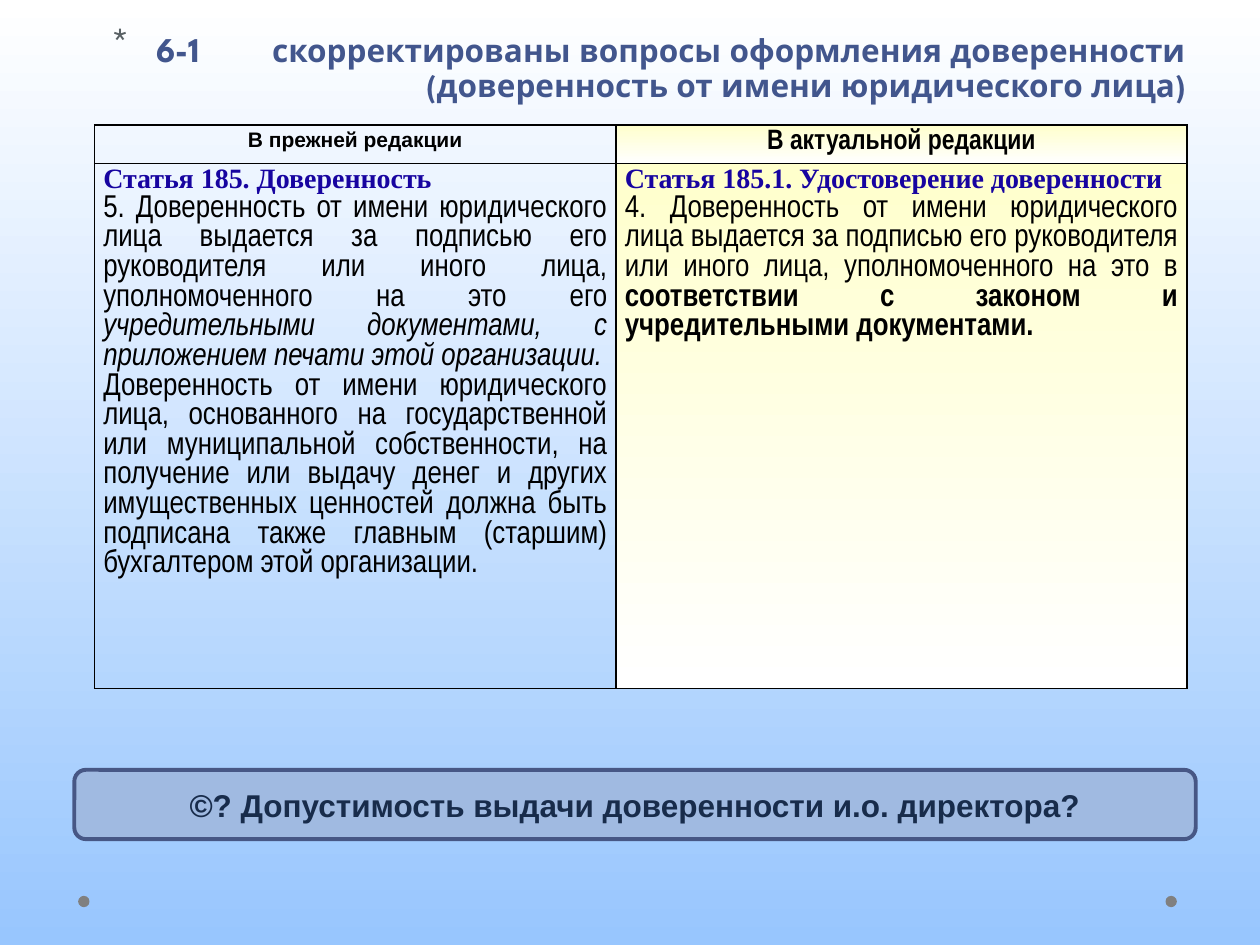
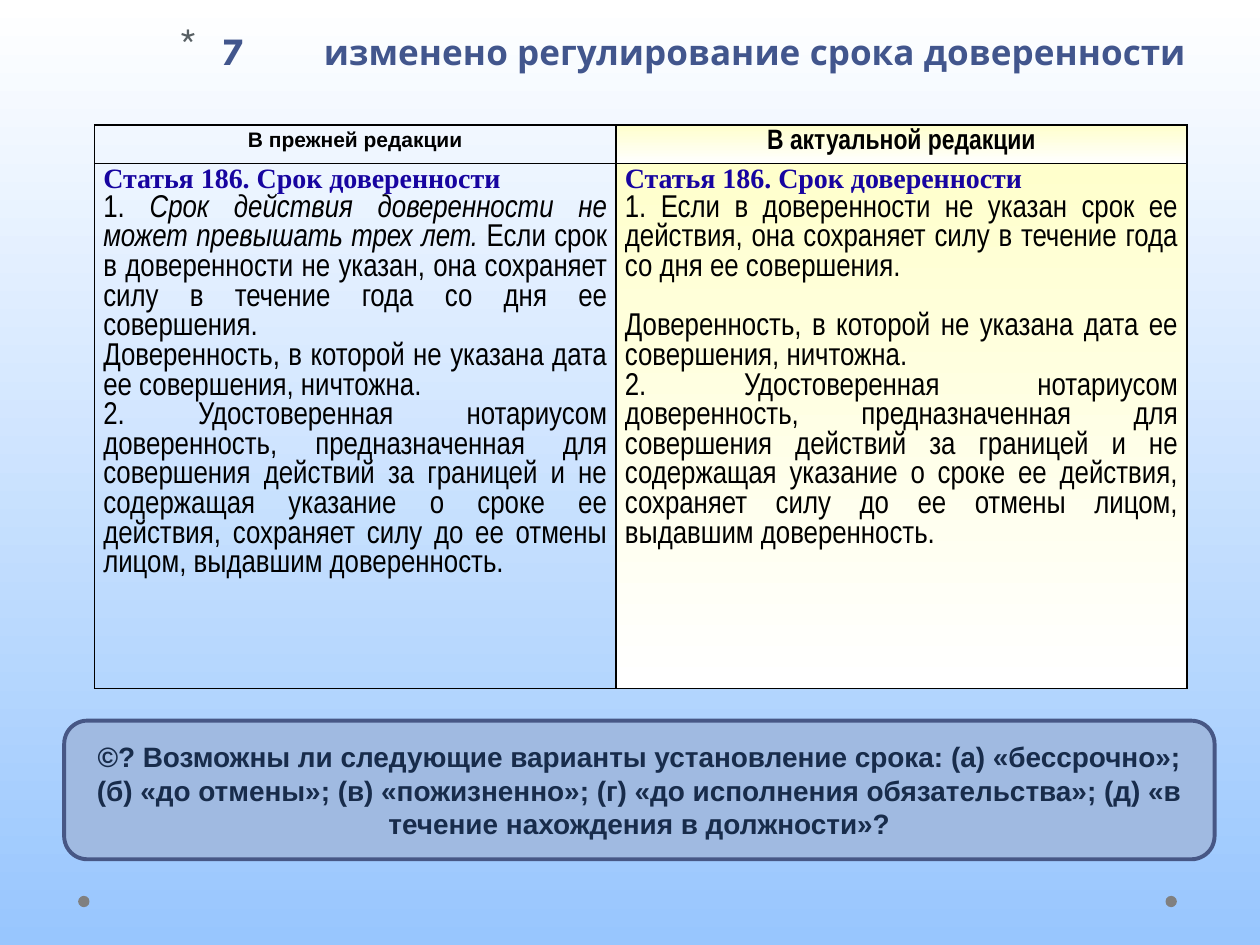
from dataclasses import dataclass, field

from lxml import etree
from pptx import Presentation
from pptx.dml.color import RGBColor
from pptx.dml.fill import FillFormat
from pptx.enum.shapes import MSO_SHAPE
from pptx.enum.text import MSO_ANCHOR, PP_ALIGN
from pptx.oxml.ns import qn
from pptx.slide import Slide
from pptx.table import _Cell
from pptx.text.text import _Paragraph, _Run
from pptx.util import Inches, Pt

CENTER, RIGHT, JUSTIFY = PP_ALIGN.CENTER, PP_ALIGN.RIGHT, PP_ALIGN.JUSTIFY
TOP, MIDDLE = MSO_ANCHOR.TOP, MSO_ANCHOR.MIDDLE
OVAL, ROUNDED = MSO_SHAPE.OVAL, MSO_SHAPE.ROUNDED_RECTANGLE

COLORS = {
    "sky_top": "FFFFFF",
    "sky_bottom": "98C6FE",
    "dot": "808080",
    "title": "42568D",
    "bullet": "586064",
    "black": "000000",
    "article": "1704A0",
    "new_top": "FFFFCC",
    "new_bottom": "FFFFFF",
    "question_fill": "A0BAE1",
    "question_line": "475785",
    "question_text": "182C4B",
}
TITLE_FONT, BASE_FONT = "League Spartan", "Arial"
LAW_FONT, ARTICLE_FONT = "Arial Narrow", "Times New Roman"
LAW_SIZE = 18
LAW_LINE = 16.9
COLUMN_WIDTHS = (4.14, 4.53)
ROW_HEIGHTS = (0.2, 2.47)


@dataclass
class Style:
    font: str
    size: float
    color: str
    bold: bool = True


@dataclass
class Phrase:
    text: str
    bold: bool = False
    italic: bool = False


@dataclass
class Clause:
    phrases: list[Phrase]
    space_before: float = 0


@dataclass
class Edition:
    article: str
    clauses: list[Clause] = field(default_factory=list)


@dataclass
class Question:
    text: str
    size: float
    box: tuple[float, float, float, float]


@dataclass
class Topic:
    number: str
    number_size: float
    title: list[str]
    title_size: float
    former: Edition
    current: Edition
    question: Question


UNDATED = Clause([Phrase("Доверенность, в которой не указана дата ее совершения, ничтожна.")])
ABROAD = Clause([Phrase(
    "2. Удостоверенная нотариусом доверенность, предназначенная для совершения действий "
    "за границей и не содержащая указание о сроке ее действия, сохраняет силу до ее отмены "
    "лицом, выдавшим доверенность.")])
SIGNATURE = ("Доверенность от имени юридического лица выдается за подписью его руководителя "
             "или иного лица, уполномоченного на это ")
TERM_ARTICLE = "Статья 186. Срок доверенности"

TOPICS = [
    Topic(
        "6-1", 19.8,
        ["скорректированы вопросы оформления доверенности",
         "(доверенность от имени юридического лица)"], 18,
        Edition("Статья 185. Доверенность", [
            Clause([
                Phrase("5. " + SIGNATURE + "его "),
                Phrase("учредительными документами, с приложением печати этой организации.",
                       italic=True),
            ]),
            Clause([Phrase(
                "Доверенность от имени юридического лица, основанного на государственной или "
                "муниципальной собственности, на получение или выдачу денег и других "
                "имущественных ценностей должна быть подписана также главным (старшим) "
                "бухгалтером этой организации.")]),
        ]),
        Edition("Статья 185.1. Удостоверение доверенности", [
            Clause([
                Phrase("4. " + SIGNATURE + "в "),
                Phrase("соответствии с законом и учредительными документами.", bold=True),
            ]),
        ]),
        Question("©? Допустимость выдачи доверенности и.о. директора?", 18,
                 (0.59, 6.11, 8.9, 0.55)),
    ),
    Topic(
        "7", 22, ["изменено регулирование срока доверенности"], 20,
        Edition(TERM_ARTICLE, [
            Clause([
                Phrase("1. "),
                Phrase("Срок действия доверенности не может превышать трех лет.", italic=True),
                Phrase(" Если срок в доверенности не указан, она сохраняет силу в течение "
                       "года со дня ее совершения."),
            ]),
            UNDATED,
            ABROAD,
        ]),
        Edition(TERM_ARTICLE, [
            Clause([Phrase("1. Если в доверенности не указан срок ее действия, она сохраняет "
                           "силу в течение года со дня ее совершения.")]),
            Clause(UNDATED.phrases, space_before=LAW_LINE),
            ABROAD,
        ]),
        Question("©? Возможны ли следующие варианты установление срока: (а) «бессрочно»; "
                 "(б) «до отмены»; (в) «пожизненно»; (г) «до исполнения обязательства»; "
                 "(д) «в течение нахождения в должности»?", 16,
                 (0.51, 5.72, 9.13, 1.1)),
    ),
]


def rgb(name: str) -> RGBColor:
    return RGBColor.from_string(COLORS[name])


def add_run(paragraph: _Paragraph, text: str, style: Style, italic: bool = False) -> _Run:
    run = paragraph.add_run()
    run.text = text
    run.font.name = style.font
    run.font.size = Pt(style.size)
    run.font.bold = style.bold
    run.font.italic = italic
    run.font.color.rgb = rgb(style.color)
    return run


def fill_downward(fill: FillFormat, top: str, bottom: str) -> None:
    """Apply a vertical gradient from top to bottom."""
    fill.gradient()
    fill.gradient_angle = 270
    for stop, name in zip(fill.gradient_stops, (top, bottom)):
        stop.color.rgb = rgb(name)


def add_backdrop(slide: Slide) -> None:
    fill_downward(slide.background.fill, "sky_top", "sky_bottom")
    for left in (0.62, 9.25):
        dot = slide.shapes.add_shape(OVAL, Inches(left), Inches(7.11), Inches(0.09), Inches(0.09))
        dot.shadow.inherit = False
        dot.fill.solid()
        dot.fill.fore_color.rgb = rgb("dot")
        dot.line.fill.background()


def set_asterisk_bullet(paragraph: _Paragraph) -> None:
    properties = paragraph._p.get_or_add_pPr()
    properties.set("marL", str(Inches(0.35)))
    properties.set("indent", str(-Inches(0.35)))
    color = etree.SubElement(properties, qn("a:buClr"))
    etree.SubElement(color, qn("a:srgbClr"), val=COLORS["bullet"])
    etree.SubElement(properties, qn("a:buSzPct"), val="128000")
    etree.SubElement(properties, qn("a:buFont"), typeface=TITLE_FONT)
    etree.SubElement(properties, qn("a:buChar"), char="*")


def add_title(slide: Slide, topic: Topic) -> None:
    frame = slide.shapes.add_textbox(Inches(0.51), Inches(0.21), Inches(9), Inches(0.63)).text_frame
    frame.word_wrap = True
    frame.vertical_anchor = TOP
    paragraph = frame.paragraphs[0]
    paragraph.alignment = RIGHT
    paragraph.line_spacing = 0.9
    set_asterisk_bullet(paragraph)
    number_style = Style(TITLE_FONT, topic.number_size, "title")
    add_run(paragraph, topic.number, number_style)
    gap = add_run(paragraph, " ", number_style)
    gap._r.get_or_add_rPr().set("spc", str(round(topic.number_size * 182)))
    for index, line in enumerate(topic.title):
        if index:
            paragraph.add_line_break()
        add_run(paragraph, line, Style(TITLE_FONT, topic.title_size, "title"))


def set_borders(cell: _Cell) -> None:
    properties = cell._tc.get_or_add_tcPr()
    for index, side in enumerate(("lnL", "lnR", "lnT", "lnB")):
        border = etree.Element(qn(f"a:{side}"), w=str(Pt(1)))
        solid = etree.SubElement(border, qn("a:solidFill"))
        etree.SubElement(solid, qn("a:srgbClr"), val=COLORS["black"])
        properties.insert(index, border)


def write_heading(cell: _Cell, text: str, style: Style) -> None:
    paragraph = cell.text_frame.paragraphs[0]
    paragraph.alignment = CENTER
    paragraph.line_spacing = 1.15
    add_run(paragraph, text, style)


def write_edition(cell: _Cell, edition: Edition) -> None:
    heading = cell.text_frame.paragraphs[0]
    heading.alignment = JUSTIFY
    add_run(heading, edition.article, Style(ARTICLE_FONT, 16, "article"))
    for clause in edition.clauses:
        paragraph = cell.text_frame.add_paragraph()
        paragraph.alignment = JUSTIFY
        paragraph.space_before = Pt(clause.space_before)
        for phrase in clause.phrases:
            style = Style(LAW_FONT, LAW_SIZE, "black", phrase.bold)
            add_run(paragraph, phrase.text, style, phrase.italic)


def add_comparison(slide: Slide, topic: Topic) -> None:
    table = slide.shapes.add_table(
        2, 2, Inches(0.75), Inches(0.99),
        Inches(sum(COLUMN_WIDTHS)), Inches(sum(ROW_HEIGHTS))).table
    table.first_row = table.horz_banding = False
    for column, width in zip(table.columns, COLUMN_WIDTHS):
        column.width = Inches(width)
    for row, height in zip(table.rows, ROW_HEIGHTS):
        row.height = Inches(height)
        for cell in row.cells:
            cell.margin_left = cell.margin_right = Inches(0.07)
            cell.margin_top = cell.margin_bottom = 0
            set_borders(cell)
        former, current = row.cells
        former.fill.background()
        fill_downward(current.fill, "new_top", "new_bottom")
    write_heading(table.cell(0, 0), "В прежней редакции", Style(BASE_FONT, 12, "black"))
    write_heading(table.cell(0, 1), "В актуальной редакции", Style(LAW_FONT, 16, "black"))
    write_edition(table.cell(1, 0), topic.former)
    write_edition(table.cell(1, 1), topic.current)


def add_question(slide: Slide, question: Question) -> None:
    panel = slide.shapes.add_shape(ROUNDED, *(Inches(length) for length in question.box))
    panel.shadow.inherit = False
    panel.fill.solid()
    panel.fill.fore_color.rgb = rgb("question_fill")
    panel.line.color.rgb = rgb("question_line")
    panel.line.width = Pt(2.25)
    frame = panel.text_frame
    frame.word_wrap = True
    frame.vertical_anchor = MIDDLE
    paragraph = frame.paragraphs[0]
    paragraph.alignment = CENTER
    add_run(paragraph, question.text, Style(BASE_FONT, question.size, "question_text"))


def main() -> None:
    deck = Presentation()
    deck.slide_width, deck.slide_height = Inches(10), Inches(7.5)
    for topic in TOPICS:
        slide = deck.slides.add_slide(deck.slide_layouts[6])
        add_backdrop(slide)
        add_title(slide, topic)
        add_comparison(slide, topic)
        add_question(slide, topic.question)
    deck.save("out.pptx")


if __name__ == "__main__":
    main()
